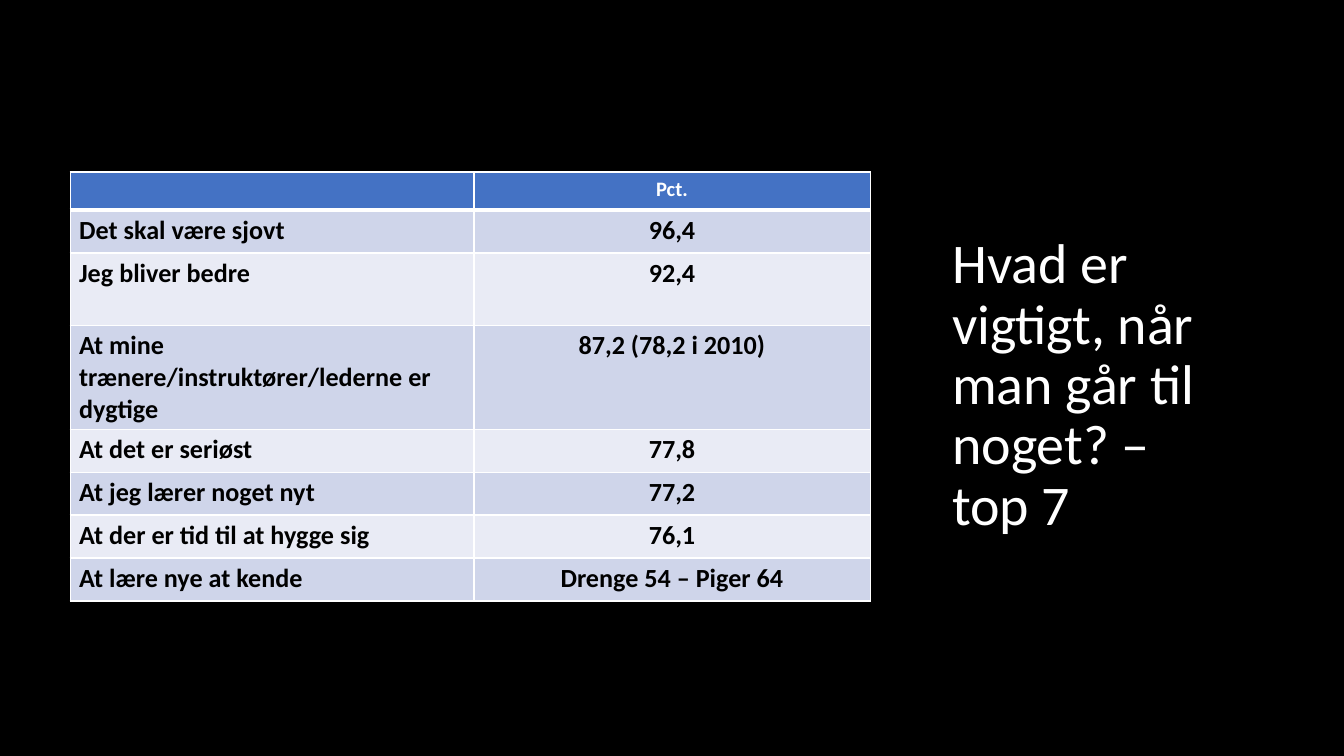
import dataclasses

import lxml.etree
import pptx
import pptx.dml.color
import pptx.enum.text
import pptx.oxml.ns
import pptx.util

Pt = pptx.util.Pt
Color = pptx.dml.color.RGBColor
Align = pptx.enum.text.PP_ALIGN
Anchor = pptx.enum.text.MSO_ANCHOR
qn = pptx.oxml.ns.qn


@dataclasses.dataclass(frozen=True)
class Theme:
    font: str = "Calibri"
    background: str = "000000"
    light: str = "FFFFFF"
    dark: str = "000000"
    header: str = "4472C4"
    bands: tuple[str, str] = ("CFD5EA", "E9EBF5")
    title_size: float = 30
    header_size: float = 11
    body_size: float = 14
    line: float = 1
    header_line: float = 3


@dataclasses.dataclass(frozen=True)
class Reason:
    label: str
    percent: str
    height: float = 23


THEME = Theme()
HEADER = Reason("", "Pct.", 20.3)
REASONS = [
    Reason("Det skal være sjovt", "96,4"),
    Reason("Jeg bliver bedre", "92,4", 39),
    Reason("At mine trænere/instruktører/lederne er dygtige", "87,2 (78,2 i 2010)", 55.6),
    Reason("At det er seriøst", "77,8"),
    Reason("At jeg lærer noget nyt", "77,2"),
    Reason("At der er tid til at hygge sig", "76,1"),
    Reason("At lære nye at kende", "Drenge 54 – Piger 64"),
]
COLUMNS = (216, 212.5)


def add_run(para, text: str, size: float, color: str, bold: bool = False) -> None:
    span = para.add_run()
    span.text = text
    span.font.name = THEME.font
    span.font.size = Pt(size)
    span.font.bold = bold
    span.font.color.rgb = Color.from_string(color)


def set_border(cell, side: str, width: float) -> None:
    properties = cell._tc.get_or_add_tcPr()
    border = lxml.etree.Element(qn(f"a:{side}"), w=str(Pt(width)))
    fill = lxml.etree.SubElement(border, qn("a:solidFill"))
    lxml.etree.SubElement(fill, qn("a:srgbClr"), val=THEME.light)
    properties.append(border)


def fill_cell(cell, text: str, align, size: float, color: str, fill: str,
              top: float, bottom: float) -> None:
    cell.margin_left = cell.margin_right = Pt(4.6)
    cell.margin_top = cell.margin_bottom = Pt(2.3)
    for side, width in (("lnL", THEME.line), ("lnR", THEME.line), ("lnT", top), ("lnB", bottom)):
        set_border(cell, side, width)
    cell.fill.solid()
    cell.fill.fore_color.rgb = Color.from_string(fill)
    para = cell.text_frame.paragraphs[0]
    para.alignment = align
    if text:
        add_run(para, text, size, color, bold=True)
    else:
        lxml.etree.SubElement(para._p, qn("a:endParaRPr"), sz=str(round(size * 100)))


def add_reason_table(page) -> None:
    rows = [HEADER, *REASONS]
    frame = page.shapes.add_table(
        len(rows), len(COLUMNS), Pt(37.8), Pt(92.2),
        Pt(sum(COLUMNS)), Pt(sum(row.height for row in rows)))
    table = frame.table
    for column, width in zip(table.columns, COLUMNS):
        column.width = Pt(width)
    for index, row in enumerate(rows):
        table.rows[index].height = Pt(row.height)
        is_header = index == 0
        size = THEME.header_size if is_header else THEME.body_size
        color = THEME.light if is_header else THEME.dark
        fill = THEME.header if is_header else THEME.bands[(index - 1) % 2]
        top = THEME.header_line if index == 1 else THEME.line
        bottom = THEME.header_line if is_header else THEME.line
        for column, (text, align) in enumerate(((row.label, Align.LEFT), (row.percent, Align.CENTER))):
            fill_cell(table.cell(index, column), text, align, size, color, fill, top, bottom)


def add_title(page, text: str) -> None:
    box = page.shapes.add_textbox(Pt(504.7), Pt(75.6), Pt(165.6), Pt(262.8))
    frame = box.text_frame
    frame.word_wrap = True
    frame.vertical_anchor = Anchor.MIDDLE
    frame.margin_left = Pt(5.4)
    frame.margin_right = Pt(10)
    frame.margin_top = frame.margin_bottom = Pt(2.7)
    para = frame.paragraphs[0]
    para.line_spacing = 0.9
    add_run(para, text, THEME.title_size, THEME.light)


def main() -> None:
    deck = pptx.Presentation()
    deck.slide_width = Pt(720)
    deck.slide_height = Pt(405)
    page = deck.slides.add_slide(deck.slide_layouts[6])
    page.background.fill.solid()
    page.background.fill.fore_color.rgb = Color.from_string(THEME.background)
    add_title(page, "Hvad er vigtigt, når man går til noget? – top 7")
    add_reason_table(page)
    deck.save("out.pptx")


if __name__ == "__main__":
    main()
